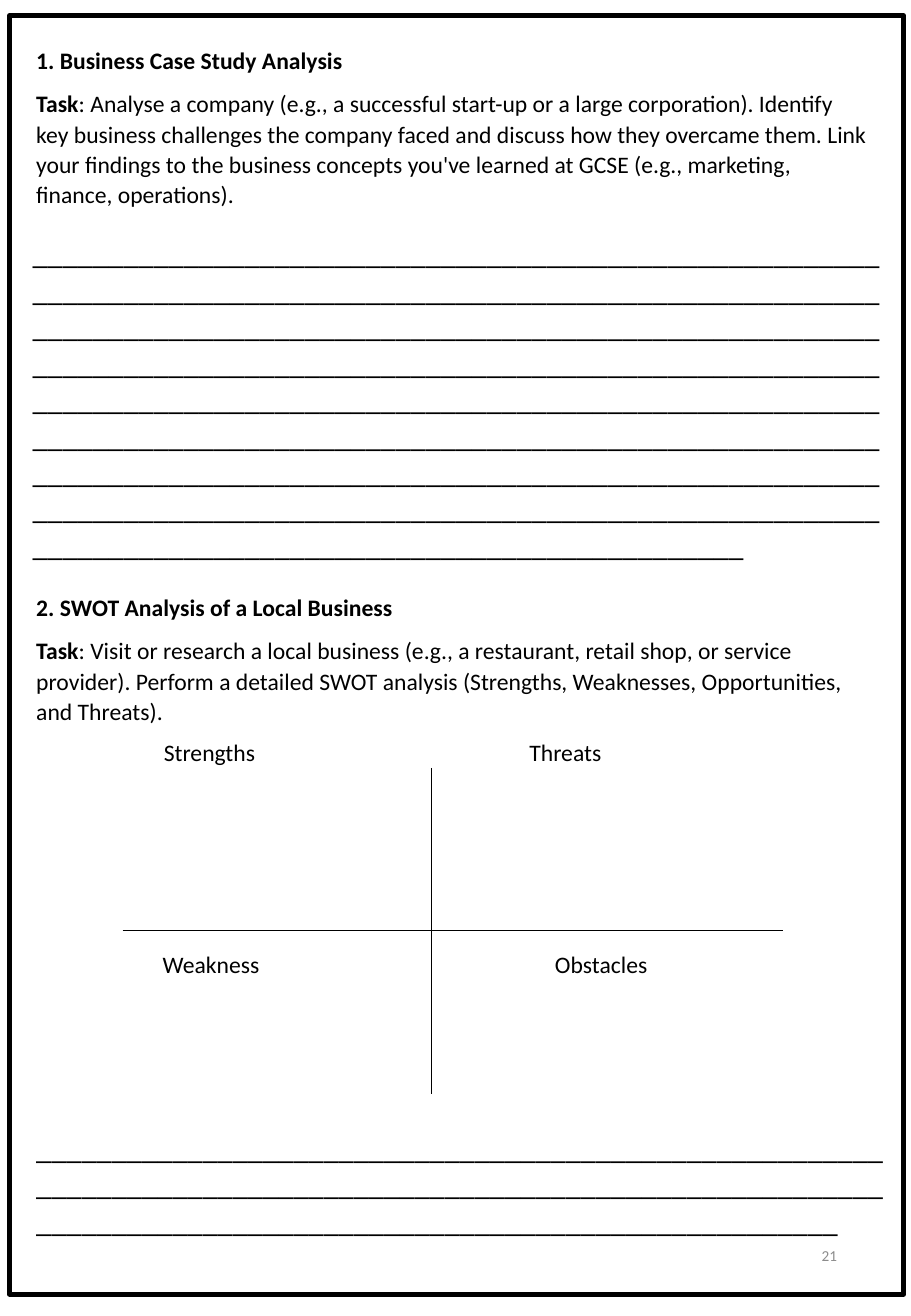
import pptx
import pptx.dml.color
import pptx.enum.shapes
import pptx.enum.text
import pptx.oxml
import pptx.util

Inches = pptx.util.Inches
Pt = pptx.util.Pt
RGB = pptx.dml.color.RGBColor
ALIGN = pptx.enum.text.PP_ALIGN
ANCHOR = pptx.enum.text.MSO_ANCHOR
AUTO = pptx.enum.text.MSO_AUTO_SIZE

BLACK = RGB(0x00, 0x00, 0x00)
WHITE = RGB(0xFF, 0xFF, 0xFF)
GREY = RGB(0x8C, 0x8C, 0x8C)

TASK_PARAGRAPH = {"line_spacing": 1.07, "space_after": Pt(8)}
RULES_PER_LINE = 56

CASE_STUDY = (
    "1. Business Case Study Analysis",
    ": Analyse a company (e.g., a successful start-up or a large corporation). "
    "Identify key business challenges the company faced and discuss how they "
    "overcame them. Link your findings to the business concepts you've learned "
    "at GCSE (e.g., marketing, finance, operations).",
)
SWOT = (
    "2. SWOT Analysis of a Local Business",
    ": Visit or research a local business (e.g., a restaurant, retail shop, or "
    "service provider). Perform a detailed SWOT analysis (Strengths, Weaknesses, "
    "Opportunities, and Threats).",
)
# Label, then its offset from the top left of the grid
QUADRANTS = [
    ("Strengths", 0.24, 0),
    ("Weakness", 0.23, 1.75),
    ("Threats", 3.25, 0),
    ("Obstacles", 3.46, 1.75),
]


def add_run(p, text, size=14, color=BLACK, bold=False):
    r = p.add_run()
    r.text = text
    for name, value in {"name": "Calibri", "size": Pt(size), "bold": bold}.items():
        setattr(r.font, name, value)
    r.font.color.rgb = color


def add_text_frame(slide, left, top, width, height, **formats):
    box = slide.shapes.add_textbox(*map(Inches, (left, top, width, height)))
    tf = box.text_frame
    settings = {"word_wrap": True, "auto_size": AUTO.SHAPE_TO_FIT_TEXT, **formats}
    for name, value in settings.items():
        setattr(tf, name, value)
    return tf


def add_border(slide, left, top, width, height):
    sp = slide.shapes.add_shape(
        pptx.enum.shapes.MSO_SHAPE.RECTANGLE,
        *map(Inches, (left, top, width, height)))
    sp.shadow.inherit = False
    sp.fill.solid()
    sp.fill.fore_color.rgb = WHITE
    sp.line.color.rgb = BLACK
    sp.line.width = Pt(3)


def add_task(slide, heading, task, left, top, width, height):
    tf = add_text_frame(slide, left, top, width, height)
    title, body = tf.paragraphs[0], tf.add_paragraph()
    for p in (title, body):
        for name, value in TASK_PARAGRAPH.items():
            setattr(p, name, value)
    add_run(title, heading, bold=True)
    add_run(body, "Task", bold=True)
    add_run(body, task)


def add_writing_lines(slide, full_lines, last_line, left, top, width, height):
    """Underscores that wrap into full lines and one shorter last line."""
    tf = add_text_frame(slide, left, top, width, height)
    add_run(tf.paragraphs[0], "_" * (full_lines * RULES_PER_LINE + last_line), 18)


def add_axis(slide, x1, y1, x2, y2):
    line = slide.shapes.add_connector(
        pptx.enum.shapes.MSO_CONNECTOR.STRAIGHT, *map(Inches, (x1, y1, x2, y2)))
    line.line.color.rgb = BLACK
    line.line.width = Pt(0.5)
    line._element.spPr.append(pptx.oxml.parse_xml(
        '<a:effectLst xmlns:a='
        '"http://schemas.openxmlformats.org/drawingml/2006/main"/>'))


def add_swot_grid(slide, left, top, width, height):
    centre_x, centre_y = left + 2.54, top + 1.64
    add_axis(slide, centre_x, top + 0.3, centre_x, top + height)
    add_axis(slide, left, centre_y, left + width, centre_y)
    for label, dx, dy in QUADRANTS:
        tf = add_text_frame(slide, left + dx, top + dy, 1.59, 0.34)
        add_run(tf.paragraphs[0], label)


def add_page_number(slide, number, left, top, width, height):
    tf = add_text_frame(slide, left, top, width, height,
                        auto_size=AUTO.NONE, vertical_anchor=ANCHOR.MIDDLE)
    p = tf.paragraphs[0]
    p.alignment = ALIGN.RIGHT
    add_run(p, number, 9, GREY)


def main():
    prs = pptx.Presentation()
    prs.slide_width, prs.slide_height = Inches(7.5), Inches(10.83)
    slide = prs.slides.add_slide(prs.slide_layouts.get_by_name("Blank"))

    add_border(slide, 0.08, 0.13, 7.36, 10.52)
    add_task(slide, *CASE_STUDY, 0.2, 0.31, 7.06, 1.46)
    add_writing_lines(slide, 8, 47, 0.17, 1.88, 7.19, 2.83)
    add_task(slide, *SWOT, 0.2, 4.81, 7.06, 1.21)
    add_swot_grid(slide, 1.01, 6.02, 5.44, 2.98)
    add_writing_lines(slide, 2, 53, 0.2, 9.24, 7.19, 1.01)
    add_page_number(slide, "21", 5.3, 10.04, 1.69, 0.58)

    prs.save("out.pptx")


if __name__ == "__main__":
    main()
